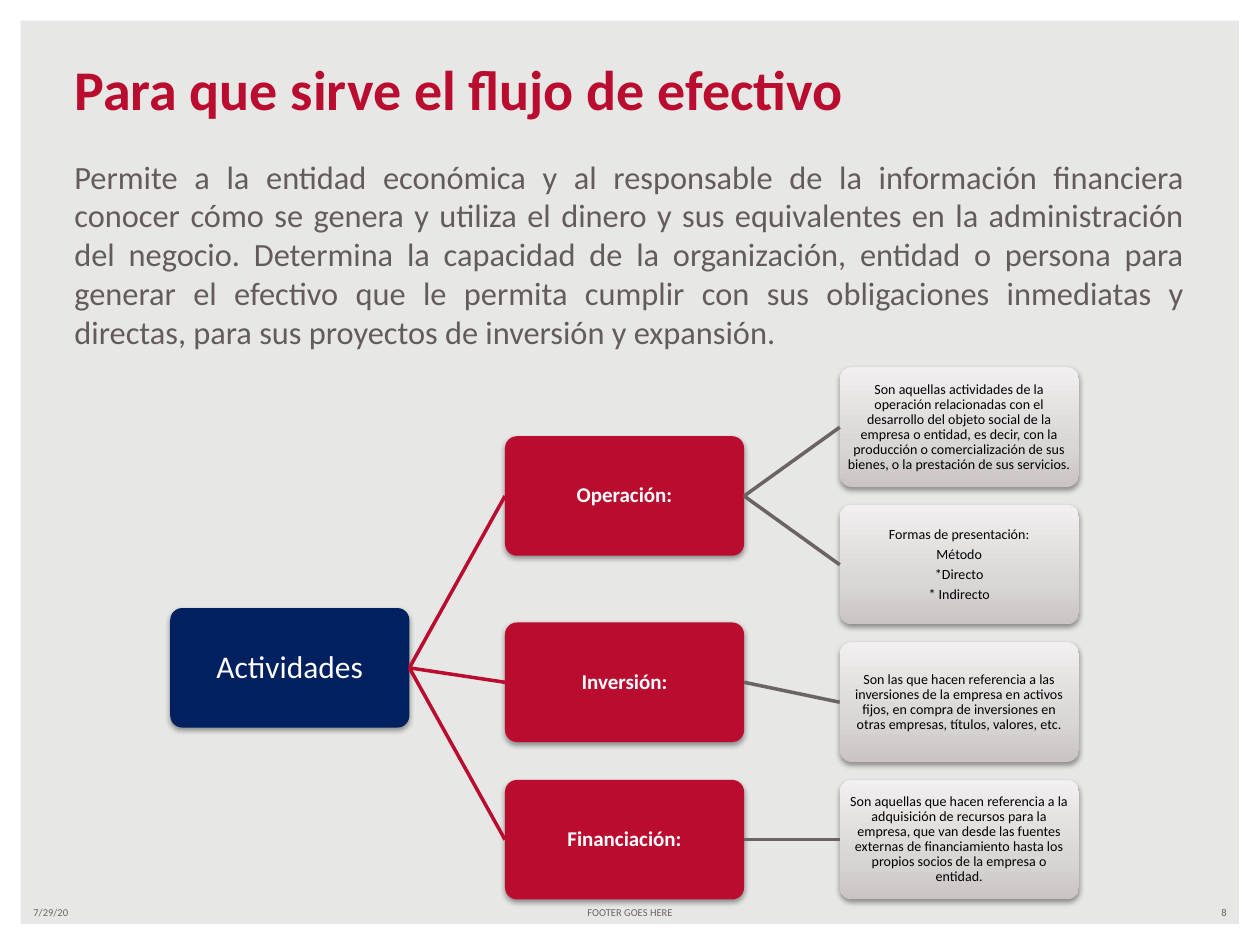
from copy import deepcopy

from lxml.etree import SubElement
from pptx import Presentation
from pptx.dml.color import RGBColor
from pptx.enum.shapes import MSO_CONNECTOR, MSO_SHAPE
from pptx.enum.text import MSO_ANCHOR, PP_ALIGN
from pptx.oxml.ns import qn
from pptx.util import Pt

FONT = "Calibri"
COLORS = {
    "background": "E7E7E5", "white": "FFFFFF", "black": "000000",
    "red": "BA0C2F", "navy": "002060", "gray": "6C6463", "body": "635C5B",
}
LEAF_GRADIENT = [(0, "CAC4C4"), (0.35, "D9D6D5"), (1, "F1EFEF")]

TITLE = "Para que sirve el flujo de efectivo"
BODY = (
    "Permite a la entidad económica y al responsable de la información financiera "
    "conocer cómo se genera y utiliza el dinero y sus equivalentes en la "
    "administración del negocio. Determina la capacidad de la organización, entidad "
    "o persona para generar el efectivo que le permita cumplir con sus obligaciones "
    "inmediatas y directas, para sus proyectos de inversión y expansión."
)
ROOT = "Actividades"
# Branch label, vertical shift from the middle of its leaves, leaf texts
BRANCHES = [
    ("Operación:", 0, [
        "Son aquellas actividades de la operación relacionadas con el desarrollo del "
        "objeto social de la empresa o entidad, es decir, con la producción o "
        "comercialización de sus bienes, o la prestación de sus servicios.",
        "Formas de presentación:\nMétodo\n*Directo\n* Indirecto",
    ]),
    ("Inversión:", -11.4, [
        "Son las que hacen referencia a las inversiones de la empresa en activos "
        "fijos, en compra de inversiones en otras empresas, títulos, valores, etc.",
    ]),
    ("Financiación:", 0, [
        "Son aquellas que hacen referencia a la adquisición de recursos para la "
        "empresa, que van desde las fuentes externas de financiamiento hasta los "
        "propios socios de la empresa o entidad.",
    ]),
]
FOOTERS = [  # text, left, width, alignment
    ("7/29/20", 12, 168, PP_ALIGN.LEFT),
    ("FOOTER GOES HERE", 246, 228, PP_ALIGN.CENTER),
    ("8", 540, 168, PP_ALIGN.RIGHT),
]


def rgb(name):
    return RGBColor.from_string(COLORS[name])


def write_text(frame, text, size, color, bold=False, align=PP_ALIGN.LEFT,
               anchor=MSO_ANCHOR.TOP):
    frame.word_wrap = True
    frame.vertical_anchor = anchor
    frame.text = text
    for paragraph in frame.paragraphs:
        paragraph.alignment = align
        paragraph.font.name = FONT
        paragraph.font.size = Pt(size)
        paragraph.font.bold = bold
        paragraph.font.color.rgb = rgb(color)


def add_text(slide, left, top, width, height, text, size, color, **style):
    box = slide.shapes.add_textbox(Pt(left), Pt(top), Pt(width), Pt(height))
    write_text(box.text_frame, text, size, color, **style)


def add_frame(slide, width, height):
    frame = slide.shapes.add_shape(MSO_SHAPE.FRAME, 0, 0, Pt(width), Pt(height))
    frame.adjustments[0] = 0.022
    frame.shadow.inherit = False
    frame.fill.solid()
    frame.fill.fore_color.rgb = rgb("white")
    frame.line.fill.background()


def add_footer(slide, top, height):
    for text, left, width, align in FOOTERS:
        add_text(slide, left, top, width, height, text, 6, "gray",
                 align=align, anchor=MSO_ANCHOR.MIDDLE)


def fill_leaf(shape):
    shape.fill.gradient()
    shape.fill.gradient_angle = 90
    stop_list = shape.fill.gradient_stops[0]._gs.getparent()
    stop_list.append(deepcopy(stop_list[-1]))
    for stop, (position, color) in zip(shape.fill.gradient_stops, LEAF_GRADIENT):
        stop.position = position
        stop.color.rgb = RGBColor.from_string(color)


def add_soft_shadow(shape):
    shape.shadow.inherit = False
    effects = shape._element.spPr.find(qn("a:effectLst"))
    shadow = SubElement(effects, qn("a:outerShdw"), blurRad=str(Pt(3.1)),
                        dist=str(Pt(1.6)), dir="5400000", rotWithShape="0")
    color = SubElement(shadow, qn("a:srgbClr"), val=COLORS["black"])
    SubElement(color, qn("a:alpha"), val="38000")


def add_node(slide, left, top, width, height, text, size, color, fill=None, bold=False):
    """Rounded box; without a fill colour it gets the leaf gradient."""
    node = slide.shapes.add_shape(MSO_SHAPE.ROUNDED_RECTANGLE,
                                  Pt(left), Pt(top), Pt(width), Pt(height))
    node.adjustments[0] = 0.1
    node.line.fill.background()
    if fill:
        node.fill.solid()
        node.fill.fore_color.rgb = rgb(fill)
    else:
        fill_leaf(node)
    add_soft_shadow(node)
    frame = node.text_frame
    frame.margin_left = frame.margin_right = Pt(2.6)
    frame.margin_top = frame.margin_bottom = Pt(2.6)
    write_text(frame, text, size, color, bold, PP_ALIGN.CENTER, MSO_ANCHOR.MIDDLE)
    for paragraph in frame.paragraphs:
        paragraph.line_spacing = 0.9
        paragraph.space_after = Pt(0.35 * size)
    return node


def connect(slide, parent, child, color):
    connector = slide.shapes.add_connector(MSO_CONNECTOR.STRAIGHT, 0, 0, 0, 0)
    connector.begin_connect(parent, 3)
    connector.end_connect(child, 1)
    connector.line.color.rgb = rgb(color)
    connector.line.width = Pt(2)
    SubElement(connector._element.spPr, qn("a:effectLst"))


def add_activity_tree(slide, left, top, width, height):
    # Three columns with gaps of 0.4 node; four leaf rows with gaps of 0.15 node
    node_width = width / 3.8
    node_height = height / 4.45
    columns = [left + i * 1.4 * node_width for i in range(3)]
    row_step = 1.15 * node_height
    size = (node_width, node_height)

    leaf_top = top
    branches = []
    branch_tops = []
    for label, shift, leaf_texts in BRANCHES:
        branch_top = leaf_top + (len(leaf_texts) - 1) * row_step / 2 + shift
        branch = add_node(slide, columns[1], branch_top, *size, label, 12,
                          "white", "red", bold=True)
        for text in leaf_texts:
            leaf = add_node(slide, columns[2], leaf_top, *size, text, 8, "black")
            connect(slide, branch, leaf, "gray")
            leaf_top += row_step
        branches.append(branch)
        branch_tops.append(branch_top)

    # Root, centred between the first and last branch
    root_top = (branch_tops[0] + branch_tops[-1]) / 2
    root = add_node(slide, columns[0], root_top, *size, ROOT, 18, "white", "navy")
    for branch in branches:
        connect(slide, root, branch, "red")


def main():
    presentation = Presentation()
    presentation.slide_width = Pt(720)
    presentation.slide_height = Pt(540)
    slide = presentation.slides.add_slide(presentation.slide_layouts[6])
    slide.background.fill.solid()
    slide.background.fill.fore_color.rgb = rgb("background")

    add_frame(slide, 720, 540)
    add_footer(slide, 514, 14.4)
    # Title and introduction
    add_text(slide, 35.5, 27.4, 648, 46, TITLE, 32, "red", bold=True)
    add_text(slide, 35.5, 86, 648, 127, BODY, 18.5, "body", align=PP_ALIGN.JUSTIFY)
    add_activity_tree(slide, 97.3, 210, 519.2, 304)
    presentation.save("out.pptx")


if __name__ == "__main__":
    main()
